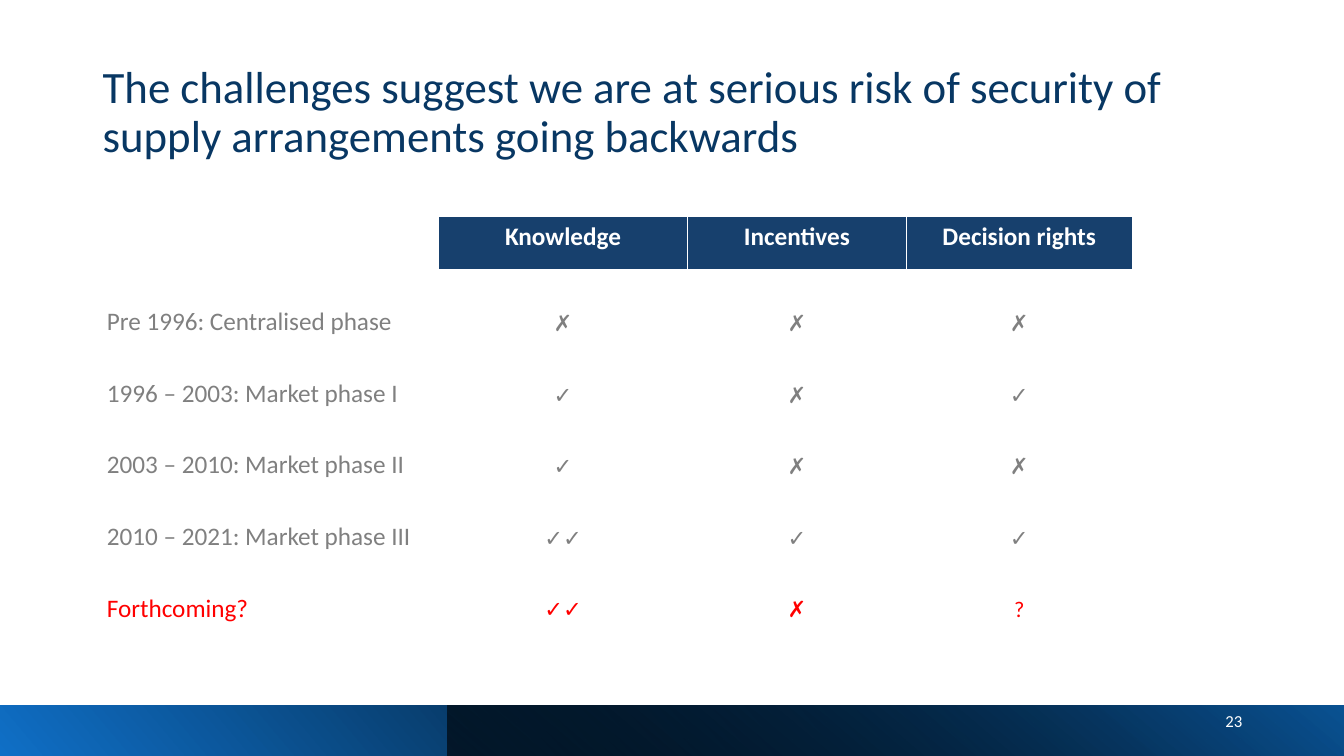
from lxml import etree
from pptx import Presentation
from pptx.dml.color import RGBColor
from pptx.enum.shapes import MSO_SHAPE
from pptx.enum.text import MSO_ANCHOR, PP_ALIGN
from pptx.oxml.ns import qn
from pptx.util import Inches, Pt

RECTANGLE = MSO_SHAPE.RECTANGLE
TOP, MIDDLE, BOTTOM = MSO_ANCHOR.TOP, MSO_ANCHOR.MIDDLE, MSO_ANCHOR.BOTTOM
LEFT, CENTER, RIGHT = PP_ALIGN.LEFT, PP_ALIGN.CENTER, PP_ALIGN.RIGHT

FONT = "Calibri"
WHITE = RGBColor(0xFF, 0xFF, 0xFF)
BLACK = RGBColor(0, 0, 0)
TITLE_NAVY = RGBColor(0x08, 0x37, 0x63)
HEADER_NAVY = RGBColor(0x17, 0x40, 0x6D)
BRIGHT_BLUE = RGBColor(0x0F, 0x6F, 0xC6)
DEEP_BLUE = RGBColor(0x0B, 0x53, 0x94)
GREY = RGBColor(0x80, 0x80, 0x80)
RED = RGBColor(0xFF, 0, 0)

HEADERS = ["", "Knowledge", "Incentives", "Decision rights"]
PHASES = [
    ["Pre 1996: Centralised phase", "✗", "✗", "✗"],
    ["1996 – 2003: Market phase I", "✓", "✗", "✓"],
    ["2003 – 2010: Market phase II", "✓", "✗", "✗"],
    ["2010 – 2021: Market phase III", "✓✓", "✓", "✓"],
    ["Forthcoming?", "✓✓", "✗", "?"],
]
COLUMN_WIDTHS = [3.39, 2.47, 2.17, 2.24]
HEADER_HEIGHT, PHASE_HEIGHT = 0.54, 0.71


def write(frame, text, size, color, align=LEFT, bold=False):
    frame.text = text
    paragraph = frame.paragraphs[0]
    paragraph.alignment = align
    for run in paragraph.runs:
        run.font.name = FONT
        run.font.size = Pt(size)
        run.font.bold = bold
        run.font.color.rgb = color
    return paragraph


def add_text(slide, box, text, size, color, align=LEFT):
    frame = slide.shapes.add_textbox(*map(Inches, box)).text_frame
    frame.word_wrap = True
    frame.vertical_anchor = MIDDLE
    return write(frame, text, size, color, align)


def add_gradient_band(slide, box, start, end, end_position, angle):
    band = slide.shapes.add_shape(RECTANGLE, *map(Inches, box))
    band.shadow.inherit = False
    band.line.fill.background()
    band.fill.gradient()
    band.fill.gradient_angle = angle
    first, last = band.fill.gradient_stops
    first.color.rgb, first.position = start, 0
    last.color.rgb, last.position = end, end_position
    return band


def add_footer(slide, box):
    left, top, width, height = box
    add_gradient_band(slide, box, BRIGHT_BLUE, BLACK, 0.78, 40)
    # The overlay covers the right two thirds and starts translucent
    overlay_box = (left + width / 3, top, width * 2 / 3, height)
    overlay = add_gradient_band(slide, overlay_box, BLACK, DEEP_BLUE, 1, 50)
    first_color = next(overlay.element.spPr.iter(qn("a:srgbClr")))
    etree.SubElement(first_color, qn("a:alpha"), val="63000")
    add_text(slide, (left + 9.42, top - 0.05, 3, 0.4), "23", 12, WHITE, RIGHT)


def add_title(slide, box):
    title = add_text(
        slide, box,
        "The challenges suggest we are at serious risk of security of "
        "supply arrangements going backwards", 32, TITLE_NAVY)
    title.line_spacing = 0.9


def set_borders(cell, top, bottom):
    properties = cell._tc.get_or_add_tcPr()
    widths = {"a:lnL": 1, "a:lnR": 1, "a:lnT": top, "a:lnB": bottom}
    # Border lines come before the fill in the cell properties
    for position, (side, width) in enumerate(widths.items()):
        line = etree.Element(qn(side), w=str(Pt(width)))
        fill = etree.SubElement(line, qn("a:solidFill"))
        etree.SubElement(fill, qn("a:srgbClr"), val=str(WHITE))
        properties.insert(position, line)


def add_phase_table(slide, box):
    rows = [HEADERS] + PHASES
    table = slide.shapes.add_table(
        len(rows), len(HEADERS), *map(Inches, box)).table
    table.horz_banding = False
    for column, width in zip(table.columns, COLUMN_WIDTHS):
        column.width = Inches(width)
    for r, texts in enumerate(rows):
        is_header = r == 0
        table.rows[r].height = Inches(
            HEADER_HEIGHT if is_header else PHASE_HEIGHT)
        color = RED if texts[0] == "Forthcoming?" else GREY
        for c, text in enumerate(texts):
            cell = table.cell(r, c)
            if is_header and text:
                cell.fill.solid()
                cell.fill.fore_color.rgb = HEADER_NAVY
            else:
                cell.fill.background()
            cell.vertical_anchor = TOP if is_header else BOTTOM
            write(cell.text_frame, text,
                  18 if is_header or c == 0 else 16,
                  WHITE if is_header else color,
                  CENTER if c else LEFT, bold=is_header)
            set_borders(cell, top=3 if r == 1 else 1,
                        bottom=3 if is_header else 1)


def main():
    presentation = Presentation()
    presentation.slide_width = Inches(13.33)
    presentation.slide_height = Inches(7.5)
    slide = presentation.slides.add_slide(presentation.slide_layouts[6])
    add_footer(slide, (0, 7, 13.33, 0.5))
    add_title(slide, (0.92, 0.4, 11.5, 1.45))
    table_height = HEADER_HEIGHT + PHASE_HEIGHT * len(PHASES)
    add_phase_table(slide, (0.96, 2.15, sum(COLUMN_WIDTHS), table_height))
    presentation.save("out.pptx")


if __name__ == "__main__":
    main()
